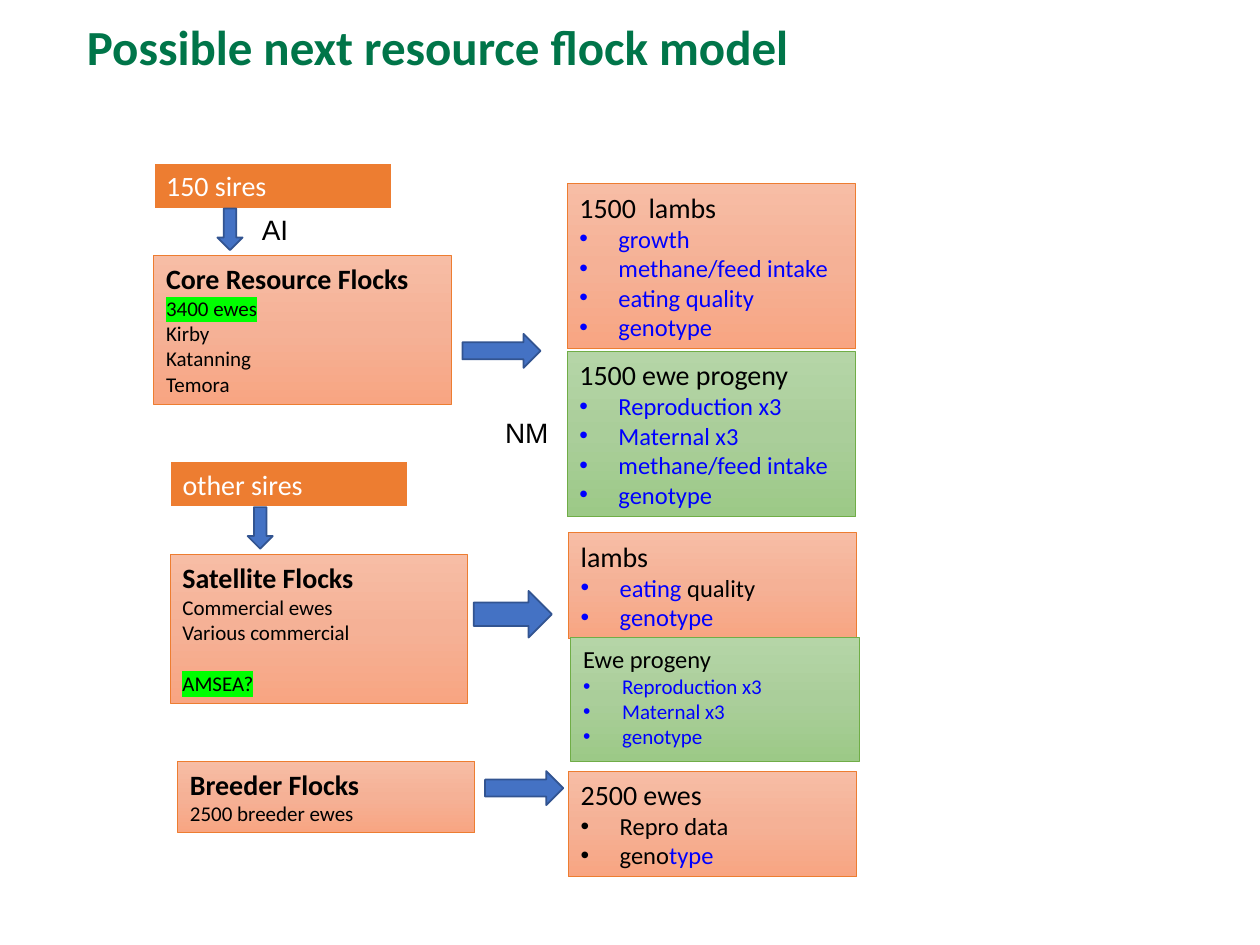
import copy

import pptx
import pptx.dml.color
import pptx.enum.shapes
import pptx.enum.text
import pptx.oxml
import pptx.oxml.ns
import pptx.util

Inches, Pt = pptx.util.Inches, pptx.util.Pt
SHAPES = pptx.enum.shapes.MSO_SHAPE
TEXT = pptx.enum.text

BLACK, BLUE, WHITE, HIGHLIGHT = "000000", "0000FF", "FFFFFF", "00FF00"
ARROW_FILL, ARROW_LINE = "4472C4", "325491"
ORANGE = {"stops": ("F7BDA5", "F5B196", "F8A582"), "line": "ED7D31"}
GREEN = {"stops": ("B5D5A7", "AACE9A", "9CC987"), "line": "70AD47"}

TITLE = "Possible next resource flock model"

# left, top, height, name, detail lines
FLOCK_WIDTH = 2.36
FLOCKS = [
    (1.22, 2.03, 1.18, "Core Resource Flocks", ["3400 ewes", "Kirby", "Katanning", "Temora"]),
    (1.35, 4.4, 1.18, "Satellite Flocks", ["Commercial ewes", "Various commercial", "AMSEA?"]),
    (1.41, 6.04, 0.57, "Breeder Flocks", ["2500 breeder ewes"]),
]
HIGHLIGHTED = {"3400 ewes", "AMSEA?"}
SET_APART = {"AMSEA?": 14.6}  # points of space before

SIRES = [(1.22, 1.29, "150 sires"), (1.35, 3.66, "other sires")]

# left, top, height, palette, heading size, heading, bullets as (text, colour) runs
PROGENY_WIDTH = 2.29
PROGENY = [
    (4.5, 1.46, 1.31, ORANGE, 16, "1500  lambs",
     [[("growth", BLUE)], [("methane/feed intake", BLUE)],
      [("eating quality", BLUE)], [("genotype", BLUE)]]),
    (4.51, 4.23, 0.84, ORANGE, 16, "lambs",
     [[("eating", BLUE), (" quality", BLACK)], [("genotype", BLUE)]]),
    (4.51, 6.12, 0.84, ORANGE, 16, "2500 ewes",
     [[("Repro data", BLACK)], [("geno", BLACK), ("type", BLUE)]]),
    (4.5, 2.79, 1.31, GREEN, 16, "1500 ewe progeny",
     [[("Reproduction x3", BLUE)], [("Maternal x3", BLUE)],
      [("methane/feed intake", BLUE)], [("genotype", BLUE)]]),
    (4.53, 5.06, 0.98, GREEN, 14, "Ewe progeny",
     [[("Reproduction x3", BLUE)], [("Maternal x3", BLUE)], [("genotype", BLUE)]]),
]

# left, top, width, height, rotation
ARROWS = [
    (1.66, 1.72, 0.33, 0.2, 90),
    (1.9, 4.09, 0.33, 0.2, 90),
    (3.67, 2.65, 0.62, 0.27, 0),
    (3.76, 4.69, 0.62, 0.37, 0),
    (3.85, 6.12, 0.62, 0.27, 0),
]
MATING_LABELS = [(1.98, 1.64, 0.46, "AI"), (3.91, 3.25, 0.62, "NM")]


def rgb(value):
    return pptx.dml.color.RGBColor.from_string(value)


def format_font(font, size, color=BLACK, bold=False, name="Calibri"):
    font.name, font.size, font.bold = name, Pt(size), bold
    font.color.rgb = rgb(color)


def add_box(slide, shape_type, place, line, line_width):
    shape = slide.shapes.add_shape(shape_type, *map(Inches, place))
    shape.shadow.inherit = False
    shape.line.color.rgb = rgb(line)
    shape.line.width = Pt(line_width)
    frame = shape.text_frame
    frame.word_wrap = True
    frame.vertical_anchor = TEXT.MSO_ANCHOR.TOP
    return shape


def fill_solid(shape, color):
    shape.fill.solid()
    shape.fill.fore_color.rgb = rgb(color)


def fill_gradient(shape, colors):
    """Fill from top to bottom with three evenly spaced colours."""
    shape.fill.gradient()
    shape.fill.gradient_angle = 270
    first = shape._element.spPr.find(".//" + pptx.oxml.ns.qn("a:gs"))
    first.addnext(copy.deepcopy(first))
    for index, (stop, color) in enumerate(zip(shape.fill.gradient_stops, colors)):
        stop.position = index / 2
        stop.color.rgb = rgb(color)


def add_paragraph(frame, runs, size, bold=False, bullet=False, first=False):
    paragraph = frame.paragraphs[0] if first else frame.add_paragraph()
    paragraph.alignment = TEXT.PP_ALIGN.LEFT
    if bullet:
        properties = paragraph._p.get_or_add_pPr()
        properties.set("marL", str(Inches(0.31)))
        properties.set("indent", str(-Inches(0.31)))
        namespace = pptx.oxml.ns.nsdecls("a")
        for tag in ('buFont typeface="Arial"', 'buChar char="•"'):
            properties.append(pptx.oxml.parse_xml(f"<a:{tag} {namespace}/>"))
    for text, color in runs:
        run = paragraph.add_run()
        run.text = text
        format_font(run.font, size, color, bold)
    return paragraph


def highlight(run):
    mark = pptx.oxml.parse_xml(
        f'<a:highlight {pptx.oxml.ns.nsdecls("a")}><a:srgbClr val="{HIGHLIGHT}"/></a:highlight>')
    run.font._element.find(pptx.oxml.ns.qn("a:solidFill")).addnext(mark)


def add_panel(slide, place, palette):
    panel = add_box(slide, SHAPES.RECTANGLE, place, palette["line"], 0.5)
    fill_gradient(panel, palette["stops"])
    panel.text_frame.auto_size = TEXT.MSO_AUTO_SIZE.SHAPE_TO_FIT_TEXT
    return panel.text_frame


def add_title(slide):
    title = slide.shapes.title
    title.left, title.top, title.width, title.height = map(Inches, (0.59, 0.09, 9.41, 1.04))
    frame = title.text_frame
    frame.text = TITLE
    frame.vertical_anchor = TEXT.MSO_ANCHOR.TOP
    frame.margin_top = Inches(0.09)
    paragraph = frame.paragraphs[0]
    paragraph.alignment = TEXT.PP_ALIGN.LEFT
    paragraph.line_spacing = 0.9
    format_font(paragraph.runs[0].font, 28, "007549", bold=True)


def main():
    deck = pptx.Presentation()
    deck.slide_width, deck.slide_height = Inches(10), Inches(7.5)
    slide = deck.slides.add_slide(deck.slide_layouts[5])
    add_title(slide)

    for left, top, height, name, details in FLOCKS:
        frame = add_panel(slide, (left, top, FLOCK_WIDTH, height), ORANGE)
        add_paragraph(frame, [(name, BLACK)], 16, bold=True, first=True)
        for detail in details:
            paragraph = add_paragraph(frame, [(detail, BLACK)], 12)
            if detail in SET_APART:
                paragraph.space_before = Pt(SET_APART[detail])
            if detail in HIGHLIGHTED:
                highlight(paragraph.runs[0])

    for left, top, sires in SIRES:
        box = add_box(slide, SHAPES.RECTANGLE, (left, top, 1.89, 0.37), WHITE, 1.5)
        fill_solid(box, ORANGE["line"])
        box.text_frame.auto_size = TEXT.MSO_AUTO_SIZE.SHAPE_TO_FIT_TEXT
        add_paragraph(box.text_frame, [(sires, WHITE)], 16, first=True)

    for left, top, height, palette, size, heading, bullets in PROGENY:
        frame = add_panel(slide, (left, top, PROGENY_WIDTH, height), palette)
        add_paragraph(frame, [(heading, BLACK)], size, first=True)
        for runs in bullets:
            add_paragraph(frame, runs, size - 2, bullet=True)

    for *place, rotation in ARROWS:
        arrow = add_box(slide, SHAPES.RIGHT_ARROW, place, ARROW_LINE, 1)
        fill_solid(arrow, ARROW_FILL)
        arrow.rotation = rotation

    for left, top, width, mating in MATING_LABELS:
        label = slide.shapes.add_textbox(*map(Inches, (left, top, width, 0.37)))
        label.text_frame.word_wrap = True
        label.text_frame.text = mating
        format_font(label.text_frame.paragraphs[0].runs[0].font, 16, name="Arial")

    deck.save("out.pptx")


if __name__ == "__main__":
    main()
